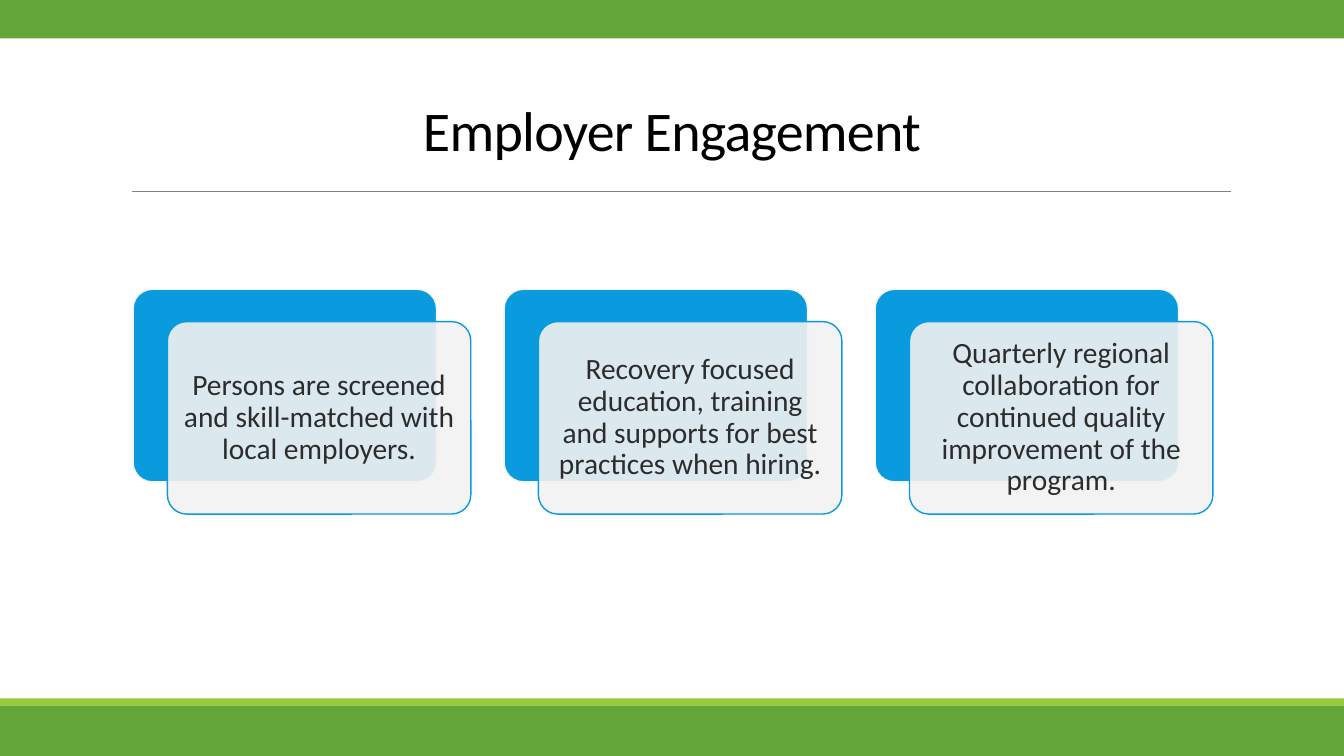
from pptx import Presentation
from pptx.dml.color import RGBColor
from pptx.enum import shapes, text
from pptx.oxml import ns
from pptx.util import Inches, Pt
from lxml import etree

BLUE, PALE = "099BDD", "F2F2F2"
GREEN, LIME = "63A537", "99CB38"
BARS = [(0, 0.38, GREEN), (6.93, 0.07, LIME), (7, 0.5, GREEN)]
CARDS = [
    "Persons are screened and skill-matched with local employers.",
    "Recovery focused education, training and supports for best "
    "practices when hiring.",
    "Quarterly regional collaboration for continued quality "
    "improvement of the program.",
]


def rgb(code):
    return RGBColor.from_string(code)


def add_box(slide, kind, left, top, width, height, fill):
    box = slide.shapes.add_shape(
        kind, Inches(left), Inches(top), Inches(width), Inches(height))
    box.shadow.inherit = False
    box.fill.solid()
    box.fill.fore_color.rgb = rgb(fill)
    box.line.fill.background()
    return box


def add_panel(slide, left, top, fill, edge):
    panel = add_box(slide, shapes.MSO_SHAPE.ROUNDED_RECTANGLE,
                    left, top, 3.01, 1.91, fill)
    panel.adjustments[0] = 0.1
    panel.line.color.rgb = rgb(edge)
    panel.line.width = Pt(1)
    return panel


def set_alpha(shape, share):
    color = shape.fill._xPr.find(".//" + ns.qn("a:srgbClr"))
    etree.SubElement(color, ns.qn("a:alpha"), val=str(share * 1000))


def style(para, size, color, space):
    para.alignment = text.PP_ALIGN.CENTER
    para.line_spacing = space
    para.font.name = "Calibri"
    para.font.size = Pt(size)
    para.font.color.rgb = rgb(color)


def add_card(slide, left, words):
    add_panel(slide, left, 2.87, BLUE, PALE)
    front = add_panel(slide, left + 0.34, 3.19, PALE, BLUE)
    set_alpha(front, 90)
    frame = front.text_frame
    frame.word_wrap = True
    frame.vertical_anchor = text.MSO_ANCHOR.MIDDLE
    frame.margin_left = frame.margin_right = Inches(0.09)
    frame.margin_top = frame.margin_bottom = Inches(0.09)
    frame.text = words
    style(frame.paragraphs[0], 21, "2C2C2C", 0.9)


def add_rule(slide):
    rule = slide.shapes.add_connector(
        shapes.MSO_CONNECTOR.STRAIGHT,
        Inches(1.31), Inches(1.9), Inches(12.21), Inches(1.9))
    rule.line.color.rgb = rgb("808080")
    rule.line.width = Pt(0.5)
    etree.SubElement(rule._element.spPr, ns.qn("a:effectLst"))


def set_title(slide, words):
    title = slide.shapes.title
    title.left, title.top = Inches(0), Inches(0.75)
    title.width, title.height = Inches(13.33), Inches(1.17)
    frame = title.text_frame
    frame.vertical_anchor = text.MSO_ANCHOR.MIDDLE
    frame.text = words
    para = frame.paragraphs[0]
    style(para, 40, "000000", 0.85)
    para.runs[0].font._element.set("spc", "-50")


def main():
    deck = Presentation()
    deck.slide_width, deck.slide_height = Inches(13.33), Inches(7.5)
    slide = deck.slides.add_slide(deck.slide_layouts[5])
    set_title(slide, "Employer Engagement")
    for top, height, fill in BARS:
        add_box(slide, shapes.MSO_SHAPE.RECTANGLE,
                0, top, 13.33, height, fill)
    add_rule(slide)
    for index, words in enumerate(CARDS):
        add_card(slide, 1.32 + index * 3.68, words)
    deck.save("out.pptx")


if __name__ == "__main__":
    main()
